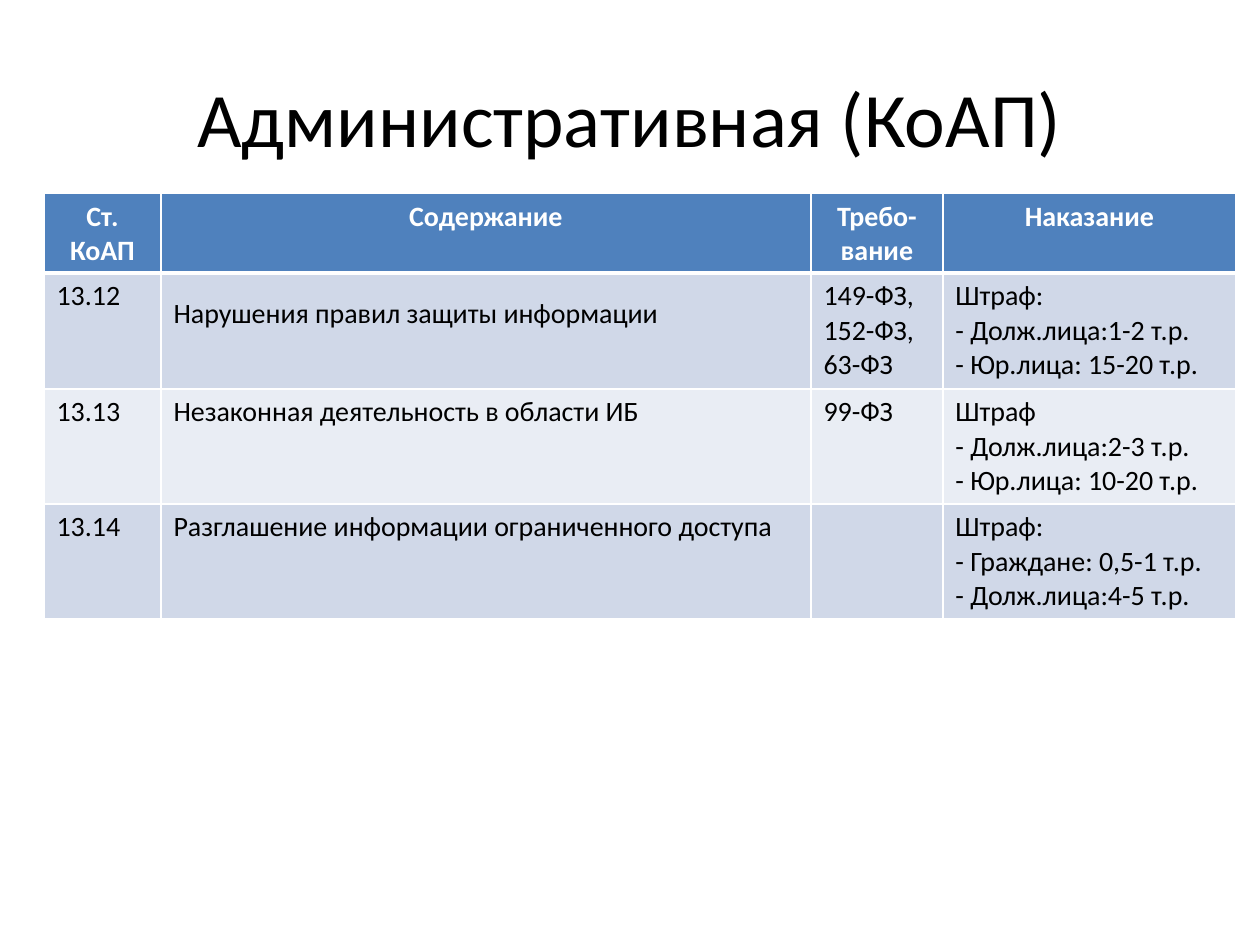
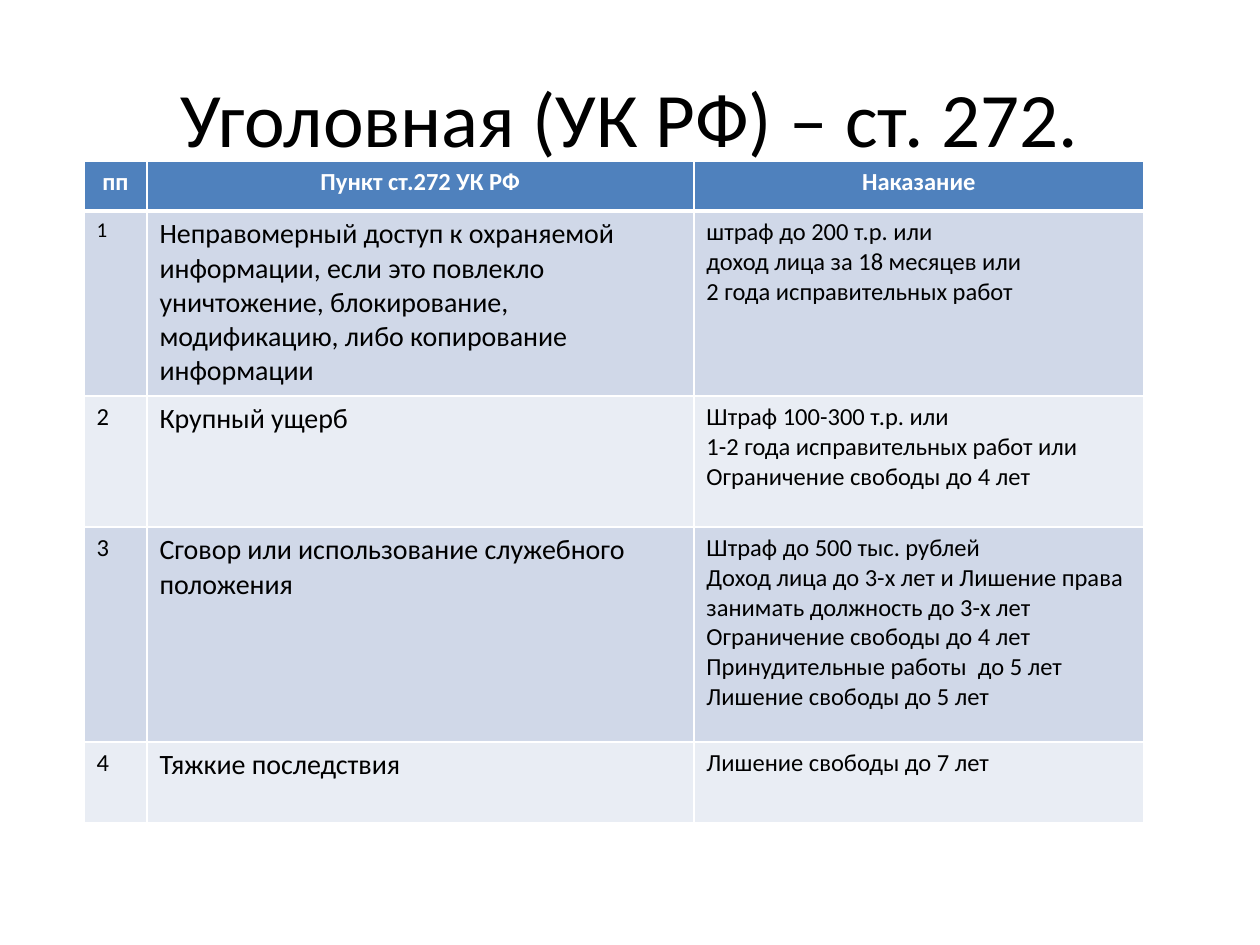
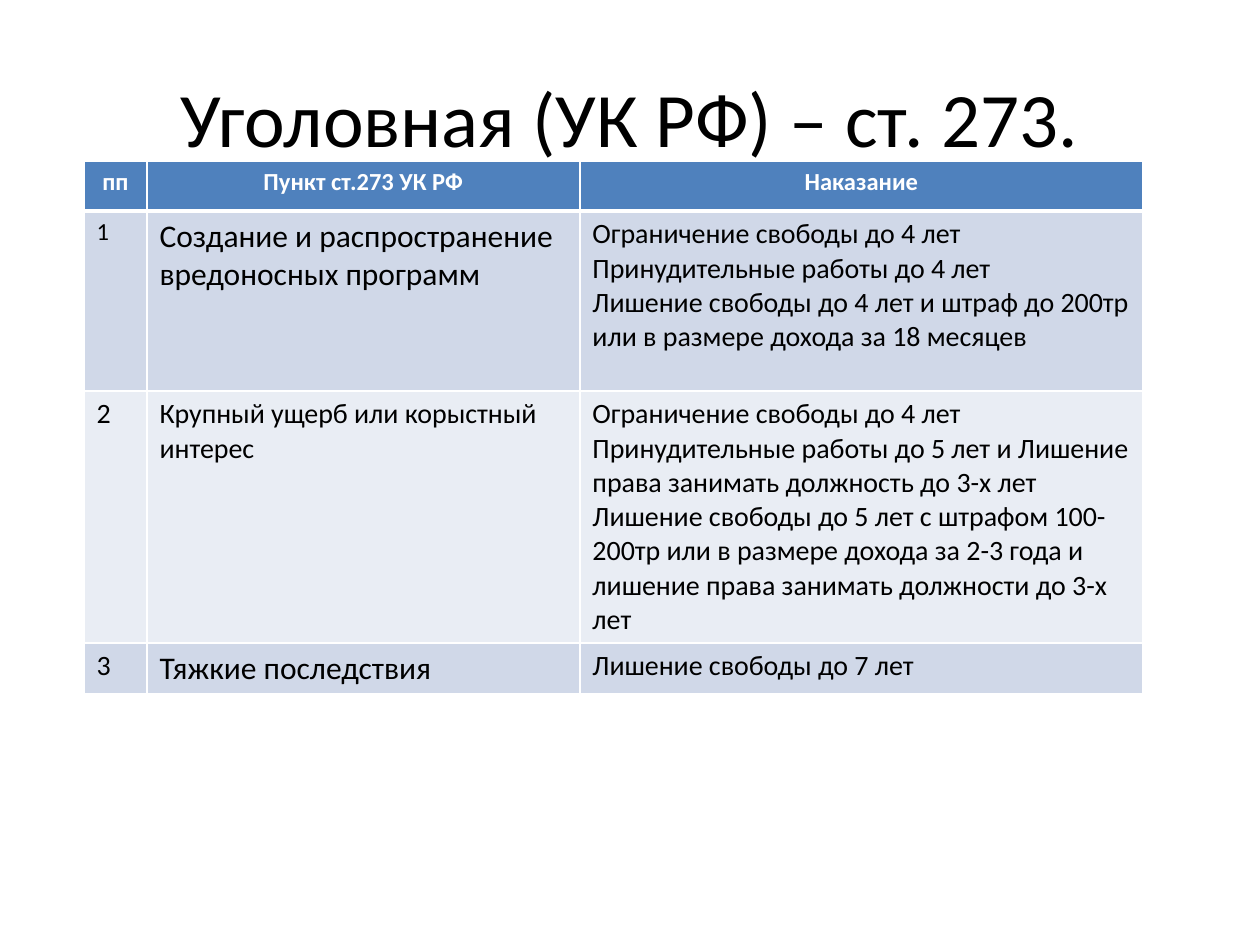
from lxml.etree import fromstring
from pptx import Presentation
from pptx.dml.color import RGBColor
from pptx.enum.text import MSO_ANCHOR, PP_ALIGN
from pptx.util import Pt

PX = 7257  # EMU per px, 126 px to the inch
FONT = "Calibri"
BLACK = RGBColor(0x00, 0x00, 0x00)
WHITE = RGBColor(0xFF, 0xFF, 0xFF)
HEADER = RGBColor(0x4F, 0x81, 0xBD)
BANDS = [RGBColor(0xE9, 0xED, 0xF4), RGBColor(0xD0, 0xD8, 0xE8)]
NS = "http://schemas.openxmlformats.org/drawingml/2006/main"


def style(p, size, color, bold=False, align=PP_ALIGN.LEFT):
    p.alignment = align
    p.font.name, p.font.size = FONT, Pt(size)
    p.font.bold, p.font.color.rgb = bold, color


def add_borders(cell, row):
    """White grid, with a thicker rule below the header row."""
    widths = {"lnL": 1, "lnR": 1, "lnT": 3 if row == 1 else 1, "lnB": 3 if row == 0 else 1}
    tc_pr = cell._tc.get_or_add_tcPr()
    for i, (side, width) in enumerate(widths.items()):
        tc_pr.insert(i, fromstring(
            f'<a:{side} xmlns:a="{NS}" w="{Pt(width)}"><a:solidFill>'
            f'<a:srgbClr val="{WHITE}"/></a:solidFill></a:{side}>'))


# Each slide: title, table position, columns, row heights, text sizes by row, cells
SLIDES = [
    dict(
        title="Административная (КоАП)",
        at=(44, 193), cols=[117, 650, 132, 293], heights=[80, 116, 115, 115],
        sizes=[[16] * 4] * 4,
        cells=[
            ["Ст.\nКоАП", "Содержание", "Требо-вание", "Наказание"],
            ["13.12", "Нарушения правил защиты информации", "149-ФЗ,\n152-ФЗ,\n63-ФЗ",
             "Штраф:\n- Долж.лица:1-2 т.р.\n- Юр.лица: 15-20 т.р."],
            ["13.13", "Незаконная деятельность в области ИБ", "99-ФЗ",
             "Штраф\n- Долж.лица:2-3 т.р.\n- Юр.лица: 10-20 т.р."],
            ["13.14", "Разглашение информации ограниченного доступа", "",
             "Штраф:\n- Граждане: 0,5-1 т.р.\n- Долж.лица:4-5 т.р."],
        ],
        spacing={(1, 1): 1.5},
    ),
    dict(
        title="Уголовная (УК РФ) – ст. 272.",
        at=(84, 161), cols=[63, 547, 450], heights=[50, 185, 131, 215, 81],
        sizes=[[14] * 3, [12, 16, 14]] + [[14, 16, 14]] * 3,
        cells=[
            ["пп", "Пункт ст.272 УК РФ", "Наказание"],
            ["1", "Неправомерный доступ к охраняемой информации, если это повлекло "
                  "уничтожение, блокирование, модификацию, либо копирование информации",
             "штраф до 200 т.р. или\nдоход лица за 18 месяцев или\n"
             "2 года исправительных работ"],
            ["2", "Крупный ущерб",
             "Штраф 100-300 т.р. или\n1-2 года исправительных работ или\n"
             "Ограничение свободы до 4 лет"],
            ["3", "Сговор или использование служебного положения",
             "Штраф до 500 тыс. рублей\n"
             "Доход лица до 3-х лет и Лишение права занимать должность до 3-х лет\n"
             "Ограничение свободы до 4 лет\nПринудительные работы  до 5 лет\n"
             "Лишение свободы до 5 лет"],
            ["4", "Тяжкие последствия", "Лишение свободы до 7 лет"],
        ],
        spacing={},
    ),
    dict(
        title="Уголовная (УК РФ) – ст. 273.",
        at=(84, 161), cols=[63, 433, 563], heights=[50, 180, 252, 51],
        sizes=[[14] * 3, [14, 18, 16], [16] * 3, [16, 18, 16]],
        cells=[
            ["пп", "Пункт ст.273 УК РФ", "Наказание"],
            ["1", "Создание и распространение вредоносных программ",
             "Ограничение свободы до 4 лет\nПринудительные работы до 4 лет\n"
             "Лишение свободы до 4 лет и штраф до 200тр или в размере дохода за 18 месяцев"],
            ["2", "Крупный ущерб или корыстный интерес",
             "Ограничение свободы до 4 лет\n"
             "Принудительные работы до 5 лет и Лишение права занимать должность до 3-х лет\n"
             "Лишение свободы до 5 лет с штрафом 100-200тр или в размере дохода за 2-3 года "
             "и лишение права занимать должности до 3-х лет"],
            ["3", "Тяжкие последствия", "Лишение свободы до 7 лет"],
        ],
        spacing={},
    ),
]

prs = Presentation()
prs.slide_width, prs.slide_height = 1260 * PX, 945 * PX

for data in SLIDES:
    s = prs.slides.add_slide(prs.slide_layouts[6])

    # Title
    tf = s.shapes.add_textbox(63 * PX, 38 * PX, 1134 * PX, 157 * PX).text_frame
    tf.word_wrap, tf.vertical_anchor = True, MSO_ANCHOR.MIDDLE
    tf.text = data["title"]
    style(tf.paragraphs[0], 44, BLACK, align=PP_ALIGN.CENTER)

    # Table
    left, top = data["at"]
    cols, heights = data["cols"], data["heights"]
    table = s.shapes.add_table(len(heights), len(cols), left * PX, top * PX,
                               sum(cols) * PX, sum(heights) * PX).table
    for column, width in zip(table.columns, cols):
        column.width = width * PX
    for row, height in zip(table.rows, heights):
        row.height = height * PX

    # Cells
    for r, texts in enumerate(data["cells"]):
        for c, text in enumerate(texts):
            cell = table.cell(r, c)
            cell.text = text
            cell.fill.solid()
            cell.fill.fore_color.rgb = BANDS[r % 2] if r else HEADER
            add_borders(cell, r)
            for p in cell.text_frame.paragraphs:
                size = data["sizes"][r][c]
                if r == 0:
                    style(p, size, WHITE, True, PP_ALIGN.CENTER)
                else:
                    style(p, size, BLACK)
                if (r, c) in data["spacing"]:
                    p.line_spacing = data["spacing"][r, c]

prs.save("out.pptx")
